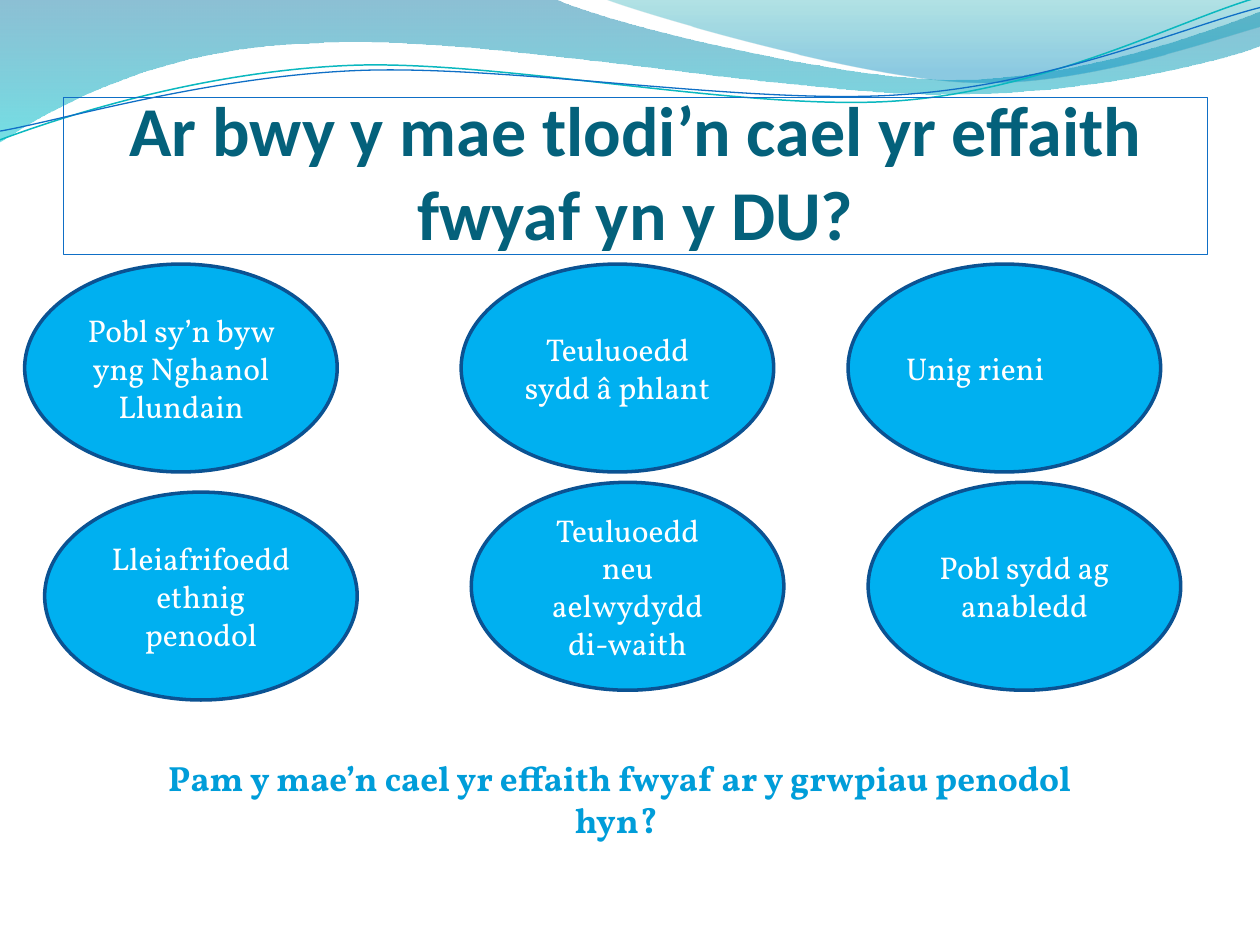
import math
from dataclasses import dataclass

from lxml import etree
from pptx import Presentation
from pptx import util as u
from pptx.dml import color
from pptx.enum import shapes, text
from pptx.oxml import ns

Pt = u.Pt


@dataclass(frozen=True)
class Theme:
    title_font: str = "Calibri"
    body_font: str = "Vollkorn"
    title_size: float = 40
    group_size: float = 18
    question_size: float = 20
    title: str = "04617B"
    question: str = "009DD9"
    group_text: str = "FFFFFF"
    group_fill: str = "00B0F0"
    group_line: str = "0B5292"
    blue_line: str = "0F6FC6"
    teal_line: str = "0AB8BF"
    band: tuple = ((0, "0074A1", 45), (1, "00C6CF", 55))
    crest: tuple = ((0, "00A1A9", 30), (0.8, "008BBF", 45))


@dataclass(frozen=True)
class Box:
    left: float
    top: float
    width: float
    height: float

    def lengths(self):
        return Pt(self.left), Pt(self.top), Pt(self.width), Pt(self.height)


THEME = Theme()
WAVE_TILT = 2.7

BAND = [(0, 0), (316.8, -0.7), (342.7, 12.2, 478.1, 45.4, 545.8, 45.4),
        (614.2, 45.4, 689.8, 18.7, 720, 6.5), (720.7, 25.9),
        (707.8, 31.7, 626.4, 54.7, 537.1, 54),
        (447.8, 54, 275, 20.2, 185, 24.5),
        (92.9, 25.9, 33.1, 59.8, -0.7, 81.4)]
CREST = [(344.9, -0.7), (366.5, 7.9, 491, 44.6, 553.7, 46.8),
         (616.3, 49.7, 691.9, 23, 720, 15.1), (720, 0)]
TEAL_WAVE = [(0, 79.9), (34.6, 67, 113.8, 41, 199.4, 37.4),
             (284.4, 33.8, 427, 64.1, 513.4, 57.6),
             (599.8, 51.1, 675.4, 10.8, 718.6, -1.4)]
BLUE_WAVE = [(0, 74.9), (33.8, 69.1, 118.1, 43.9, 203.8, 40.3),
             (290.2, 36.7, 429.8, 60.5, 516.2, 54),
             (601.9, 48.2, 677.5, 15.1, 720, 4.3)]

GROUP_WIDTH, GROUP_HEIGHT = 178.6, 118.8
GROUPS = [
    ("Pobl sy’n byw yng Nghanol Llundain", 14.1, 150.9),
    ("Teuluoedd sydd â phlant", 263.5, 150.9),
    ("Unig rieni", 484.6, 150.9),
    ("Teuluoedd neu aelwydydd di-waith", 269.3, 275.6),
    ("Lleiafrifoedd ethnig penodol", 25.5, 281.2),
    ("Pobl sydd ag anabledd", 496.1, 275.6),
]


def rgb(value):
    return color.RGBColor.from_string(value)


def set_line(shape, value, width):
    shape.line.color.rgb = rgb(value)
    shape.line.width = Pt(width)


def set_text(shape, words, font, size, value, bold=False,
             align=text.PP_ALIGN.CENTER):
    shape.text_frame.text = words
    paragraph = shape.text_frame.paragraphs[0]
    paragraph.alignment = align
    for run in paragraph.runs:
        run.font.name = font
        run.font.size = Pt(size)
        run.font.bold = bold
        run.font.color.rgb = rgb(value)


def turn(point, center, degrees):
    angle = math.radians(degrees)
    x, y = point[0] - center[0], point[1] - center[1]
    return (center[0] + x * math.cos(angle) - y * math.sin(angle),
            center[1] + x * math.sin(angle) + y * math.cos(angle))


def bend(shape, segments):
    edges = iter(list(shape.element.iter(ns.qn("a:lnTo"))))
    for segment in segments:
        edge = next(edges)
        if len(segment) == 2:
            continue
        edge.addprevious(curve := etree.Element(ns.qn("a:cubicBezTo")))
        for part in (edge, next(edges), next(edges)):
            curve.append(part[0])
            part.getparent().remove(part)


def add_outline(slide, box, segments, closed, tilt=0):
    center = (box.left + box.width / 2, box.top + box.height / 2)
    points = [turn(segment[index:index + 2], center, tilt)
              for segment in segments for index in range(0, len(segment), 2)]
    points = [(Pt(x), Pt(y)) for x, y in points]
    builder = slide.shapes.build_freeform(*points[0])
    builder.add_line_segments(points[1:], close=closed)
    shape = builder.convert_to_shape()
    bend(shape, segments[1:])
    shape.rotation = -tilt % 360
    shape.shadow.inherit = False
    return shape


def set_gradient(shape, stops):
    shape.fill.gradient()
    shape.fill.gradient_angle = 270
    for stop, (position, value, opacity) in zip(shape.fill.gradient_stops, stops):
        stop.position = position
        stop.color.rgb = rgb(value)
    colours = shape.element.spPr.iter(ns.qn("a:srgbClr"))
    for colour, (position, value, opacity) in zip(colours, stops):
        etree.SubElement(colour, ns.qn("a:alpha"), val=str(opacity * 1000))


def move_to_master(shape, master):
    shape.element.nvSpPr.cNvPr.set("id", str(100 + len(master.shapes)))
    master.shapes.element.append(shape.element)


def add_header(slide, master, box):
    for segments, stops in ((BAND, THEME.band), (CREST, THEME.crest)):
        shape = add_outline(slide, box, segments, True)
        shape.line.fill.background()
        set_gradient(shape, stops)
        move_to_master(shape, master)
    for segments, value, width in ((TEAL_WAVE, THEME.teal_line, 0.85),
                                   (BLUE_WAVE, THEME.blue_line, 0.75)):
        shape = add_outline(slide, box, segments, False, WAVE_TILT)
        shape.fill.background()
        set_line(shape, value, width)
        move_to_master(shape, master)


def add_title(slide, box):
    title = slide.shapes.title
    title.left, title.top, title.width, title.height = box.lengths()
    set_line(title, THEME.blue_line, 0.75)
    frame = title.text_frame
    frame.auto_size = text.MSO_AUTO_SIZE.NONE
    frame.vertical_anchor = text.MSO_ANCHOR.BOTTOM
    frame.margin_left = frame.margin_right = frame.margin_bottom = Pt(0)
    frame.margin_top = Pt(3.6)
    set_text(title, "Ar bwy y mae tlodi’n cael yr effaith fwyaf yn y DU?",
             THEME.title_font, THEME.title_size, THEME.title, bold=True)


def add_group(slide, box, words):
    ellipse = slide.shapes.add_shape(shapes.MSO_SHAPE.OVAL, *box.lengths())
    ellipse.shadow.inherit = False
    ellipse.fill.solid()
    ellipse.fill.fore_color.rgb = rgb(THEME.group_fill)
    set_line(ellipse, THEME.group_line, 2)
    ellipse.text_frame.vertical_anchor = text.MSO_ANCHOR.MIDDLE
    align = text.PP_ALIGN.LEFT if words == "Unig rieni" else text.PP_ALIGN.CENTER
    set_text(ellipse, words, THEME.body_font, THEME.group_size,
             THEME.group_text, align=align)


def add_question(slide, box):
    question = slide.shapes.add_textbox(*box.lengths())
    question.text_frame.word_wrap = True
    question.text_frame.auto_size = text.MSO_AUTO_SIZE.SHAPE_TO_FIT_TEXT
    set_text(question, "Pam y mae’n cael yr effaith fwyaf ar y grwpiau penodol hyn? ",
             THEME.body_font, THEME.question_size, THEME.question, bold=True)


def main():
    presentation = Presentation()
    presentation.slide_width, presentation.slide_height = Pt(720), Pt(540)
    slide = presentation.slides.add_slide(presentation.slide_layouts[5])
    add_header(slide, presentation.slide_master, Box(-1.4, 0, 721.4, 83.5))
    add_title(slide, Box(36.2, 55.7, 653.8, 89.8))
    for words, left, top in GROUPS:
        add_group(slide, Box(left, top, GROUP_WIDTH, GROUP_HEIGHT), words)
    add_question(slide, Box(76.3, 428.8, 555.8, 55.4))
    presentation.save("out.pptx")


if __name__ == "__main__":
    main()
